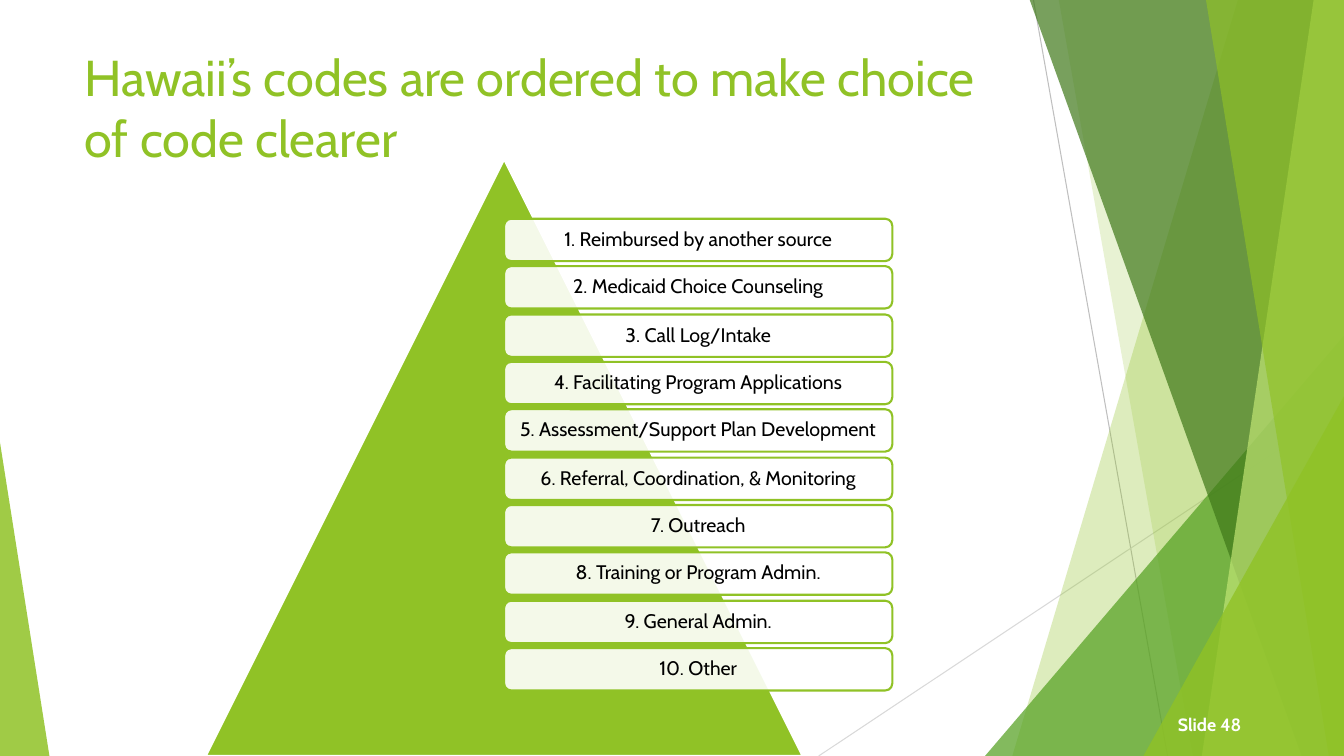
from pptx import Presentation
from pptx.dml.color import RGBColor
from pptx.enum.shapes import MSO_CONNECTOR, MSO_SHAPE
from pptx.enum.text import MSO_ANCHOR, PP_ALIGN
from pptx.oxml.ns import qn
from pptx.util import Pt
from lxml.etree import SubElement

PX = 9144
WIDTH, HEIGHT = 1333, 750
GREEN, WHITE, BLACK = "90C226", "FFFFFF", "000000"
color = RGBColor.from_string


def paint(shape, fill, opacity=100, outline=None):
    shape.shadow.inherit = False
    shape.fill.solid()
    shape.fill.fore_color.rgb = color(fill)
    if opacity < 100:
        tint = next(shape.element.iter(qn("a:srgbClr")))
        SubElement(tint, qn("a:alpha"), val=str(opacity * 1000))
    if outline:
        shape.line.color.rgb = color(outline)
        shape.line.width = Pt(1.5)
    else:
        shape.line.fill.background()


def write(box, text, ink, frame_format, para_format, font_format):
    frame = box.text_frame
    for name, value in ({"word_wrap": True} | frame_format).items():
        setattr(frame, name, value)
    para = frame.paragraphs[0]
    for name, value in para_format.items():
        setattr(para, name, value)
    span = para.add_run()
    span.text = text
    for name, value in ({"name": "Cabin"} | font_format).items():
        setattr(span.font, name, value)
    span.font.color.rgb = color(ink)


deck = Presentation()
deck.slide_width, deck.slide_height = WIDTH * PX, HEIGHT * PX
page = deck.slides.add_slide(deck.slide_layouts[6])
shapes = page.shapes

for ends, ink in [((1025, 0, 1158, 750), "BFBFBF"), ((1333, 403, 812, 750), "D9D9D9")]:
    ray = shapes.add_connector(MSO_CONNECTOR.STRAIGHT, *(end * PX for end in ends))
    ray.line.color.rgb = color(ink)
    ray.line.width = Pt(0.75)
    SubElement(ray.element.spPr, qn("a:effectLst"))

facets = [
    ("band", 1228, 1004, GREEN, 30),
    ("band", 1050, 1183, GREEN, 20),
    ("corner", 977, 333, "54A021", 72),
    ("band", 1021, 1291, "3F7819", 70),
    ("band", 1303, 1192, "C0E474", 70),
    ("band", 1196, 1318, GREEN, 65),
    ("corner", 1134, 393, GREEN, 80),
]
for kind, first, second, fill, opacity in facets:
    if kind == "band":
        builder = shapes.build_freeform(first, -1, scale=PX)
        builder.add_line_segments([(WIDTH, -1), (WIDTH, HEIGHT), (second, HEIGHT)], close=True)
        facet = builder.convert_to_shape()
    else:
        facet = shapes.add_shape(MSO_SHAPE.ISOSCELES_TRIANGLE, first * PX, second * PX,
                                 (WIDTH - first) * PX, (HEIGHT - second) * PX)
        facet.adjustments[0] = 1
    paint(facet, fill, opacity)

left_corner = shapes.add_shape(MSO_SHAPE.ISOSCELES_TRIANGLE, 0, 439 * PX, 49 * PX, 311 * PX)
left_corner.adjustments[0] = 0
paint(left_corner, GREEN, 85)

title = shapes.add_textbox(74 * PX, 41 * PX, 940 * PX, 144 * PX)
write(title, "Hawaii’s codes are ordered to make choice of code clearer", GREEN,
      {}, {}, {"size": Pt(36)})

pyramid = shapes.add_shape(MSO_SHAPE.ISOSCELES_TRIANGLE, 204 * PX, 158 * PX, 592 * PX, 592 * PX)
paint(pyramid, GREEN, outline=WHITE)

codes = [
    "Reimbursed by another source",
    "Medicaid Choice Counseling",
    "Call Log/Intake",
    "Facilitating Program Applications",
    "Assessment/Support Plan Development",
    "Referral, Coordination, & Monitoring",
    "Outreach",
    "Training or Program Admin.",
    "General Admin.",
    "Other",
]
first_top, last_top = 217, 643
pitch = (last_top - first_top) / (len(codes) - 1)
margins = {f"margin_{side}": 6 * PX for side in ("left", "top", "right", "bottom")}
for rank, code in enumerate(codes):
    top = round(first_top + rank * pitch)
    box = shapes.add_shape(MSO_SHAPE.ROUNDED_RECTANGLE, 500 * PX, top * PX, 385 * PX, 42 * PX)
    paint(box, WHITE, 90, GREEN)
    write(box, f"{rank + 1}. {code}", BLACK,
          {"vertical_anchor": MSO_ANCHOR.MIDDLE} | margins,
          {"alignment": PP_ALIGN.CENTER, "line_spacing": 0.9}, {"size": Pt(14)})

number = shapes.add_textbox(1049 * PX, 703 * PX, 192 * PX, 31 * PX)
write(number, "Slide 48", WHITE, {}, {"alignment": PP_ALIGN.RIGHT},
      {"size": Pt(12.7), "bold": True})

deck.save("out.pptx")
